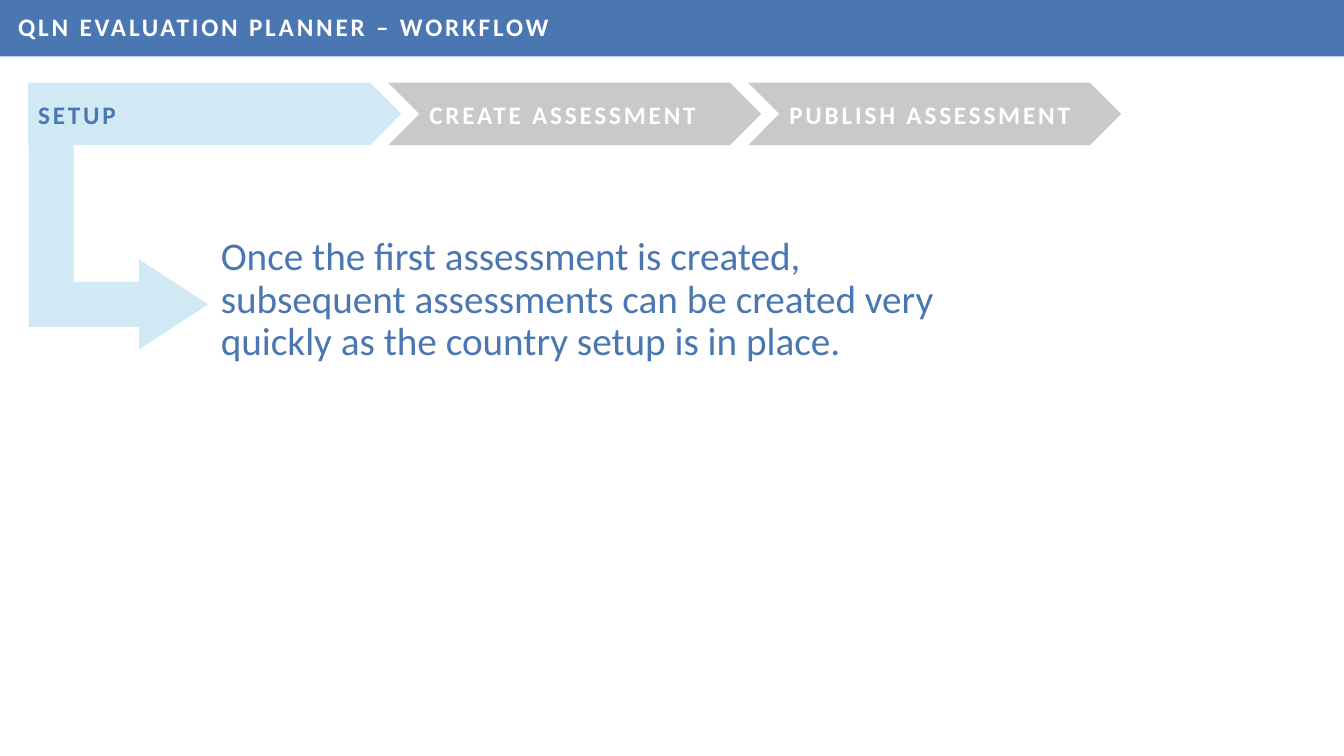
import pptx
import pptx.util
import pptx.dml.color
import pptx.enum.shapes
import pptx.enum.text
import pptx.oxml
import pptx.oxml.ns

Inches = pptx.util.Inches
MSO_SHAPE = pptx.enum.shapes.MSO_SHAPE
COLORS = {"blue": "4A77B2", "light": "D1E8F5", "gray": "C9C9C9", "white": "FFFFFF"}
SLIDE_WIDTH, SLIDE_HEIGHT = 13.33, 7.5
STEPS = [
    ("SETUP", MSO_SHAPE.PENTAGON, "light", "blue"),
    ("CREATE ASSESSMENT", MSO_SHAPE.CHEVRON, "gray", "white"),
    ("PUBLISH ASSESSMENT", MSO_SHAPE.CHEVRON, "gray", "white"),
]
STEP_WIDTH, STEP_PITCH = 3.7, 3.57


def rgb(name):
    """Return the named colour."""
    return pptx.dml.color.RGBColor.from_string(COLORS[name])


def place(shape, left, top, width, height):
    """Move and size a shape, in inches."""
    shape.left, shape.top = Inches(left), Inches(top)
    shape.width, shape.height = Inches(width), Inches(height)


def fill_shape(shape, color):
    """Give a shape a plain fill."""
    shape.fill.solid()
    shape.fill.fore_color.rgb = rgb(color)
    shape.line.fill.background()


def write_text(shape, text, size, color, anchor):
    """Write one left-aligned paragraph and return it."""
    frame = shape.text_frame
    frame.text = text
    frame.word_wrap = True
    frame.auto_size = pptx.enum.text.MSO_AUTO_SIZE.NONE
    frame.vertical_anchor = anchor
    paragraph = frame.paragraphs[0]
    paragraph.alignment = pptx.enum.text.PP_ALIGN.LEFT
    paragraph.font.name = "Calibri"
    paragraph.font.size = pptx.util.Pt(size)
    paragraph.font.color.rgb = rgb(color)
    return paragraph


def write_heading(shape, text, color):
    """Write a bold, letter-spaced heading and return its paragraph."""
    paragraph = write_text(shape, text, 18, color, pptx.enum.text.MSO_ANCHOR.MIDDLE)
    paragraph.font.bold = True
    properties = paragraph._p.get_or_add_pPr()
    properties.find(pptx.oxml.ns.qn("a:defRPr")).set("spc", "200")
    return paragraph


def build_title(slide, left, top, width, height):
    """Turn the title placeholder into the top bar."""
    title = slide.shapes.title
    place(title, left, top, width, height)
    fill_shape(title, "blue")
    paragraph = write_heading(title, "QLN EVALUATION PLANNER – WORKFLOW", "white")
    paragraph.line_spacing = 0.9
    title.text_frame.margin_left = Inches(0.18)


def build_steps(slide, left, top, height):
    """Lay the workflow steps in a row."""
    for index, (label, kind, fill, color) in enumerate(STEPS):
        step = slide.shapes.add_shape(
            kind, Inches(left + index * STEP_PITCH), Inches(top),
            Inches(STEP_WIDTH), Inches(height))
        step.shadow.inherit = False
        fill_shape(step, fill)
        write_heading(step, label, color)


def build_note(slide, left, top, width, height):
    """Place the bent arrow and the explanation it points to."""
    arrow = slide.shapes.add_shape(
        MSO_SHAPE.BENT_UP_ARROW, Inches(left), Inches(top), Inches(2.07), Inches(1.78))
    arrow.rotation = 90
    arrow.adjustments[2] = 0.385
    arrow.shadow.inherit = False
    fill_shape(arrow, "light")

    body = slide.placeholders[1]
    place(body, left + 1.95, top + 0.76, width - 1.95, height - 0.76)
    paragraph = write_text(
        body,
        "Once the first assessment is created, subsequent assessments can be "
        "created very quickly as the country setup is in place.",
        28, "blue", pptx.enum.text.MSO_ANCHOR.TOP)
    paragraph.line_spacing = 0.9
    paragraph.space_before = pptx.util.Pt(10)
    properties = paragraph._p.get_or_add_pPr()
    properties.set("marL", "0")
    properties.set("indent", "0")
    no_bullet = pptx.oxml.parse_xml(f"<a:buNone {pptx.oxml.ns.nsdecls('a')}/>")
    properties.find(pptx.oxml.ns.qn("a:defRPr")).addprevious(no_bullet)


def main():
    """Build and save the workflow slide."""
    presentation = pptx.Presentation()
    presentation.slide_width = Inches(SLIDE_WIDTH)
    presentation.slide_height = Inches(SLIDE_HEIGHT)
    slide = presentation.slides.add_slide(presentation.slide_layouts[1])
    build_title(slide, 0, 0, SLIDE_WIDTH, 0.56)
    build_note(slide, 0.14, 1.54, 9.47, 2.39)
    build_steps(slide, 0.28, 0.82, 0.62)
    presentation.save("out.pptx")


if __name__ == "__main__":
    main()
